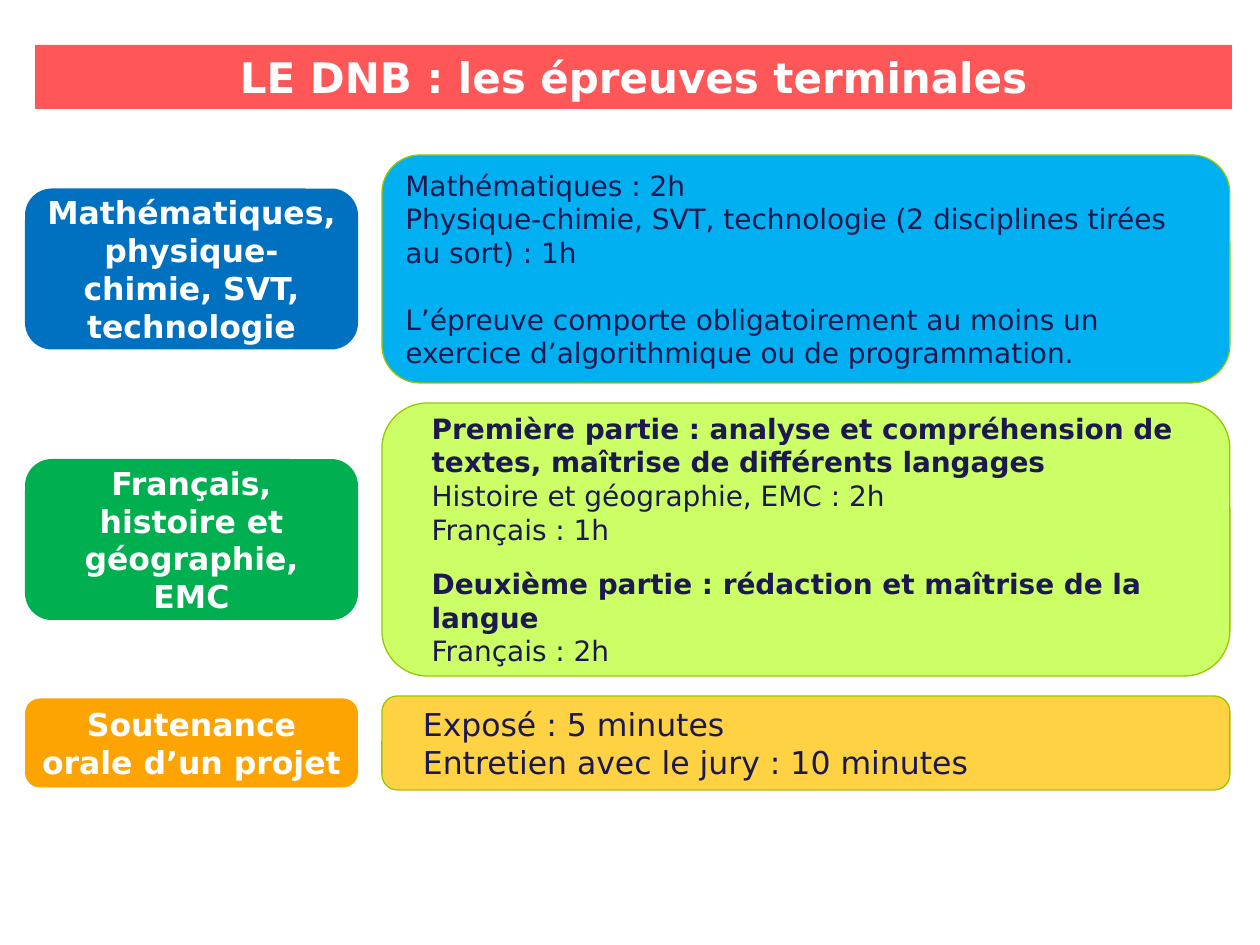
import pptx
import pptx.util
import pptx.dml.color
import pptx.enum.shapes
import pptx.enum.text

RGBColor = pptx.dml.color.RGBColor
SHAPE = pptx.enum.shapes.MSO_SHAPE
ALIGN = pptx.enum.text.PP_ALIGN
ANCHOR = pptx.enum.text.MSO_ANCHOR

WHITE = RGBColor(0xFF, 0xFF, 0xFF)
NAVY = RGBColor(0x1C, 0x18, 0x50)
CORAL = RGBColor(0xFF, 0x57, 0x57)
BLUE = RGBColor(0x00, 0x70, 0xC0)
SKY = RGBColor(0x00, 0xB0, 0xF0)
GREEN = RGBColor(0x00, 0xB0, 0x50)
LIME = RGBColor(0xCC, 0xFF, 0x66)
ORANGE = RGBColor(0xFD, 0xA4, 0x03)
YELLOW = RGBColor(0xFF, 0xD2, 0x43)
OUTLINE = RGBColor(0x96, 0xC8, 0x00)

FONT = "DejaVu Sans"
SCALE = 914400 // 126
TITLE = "LE DNB : les épreuves terminales"

# Each detail line: text, bold, space before in points
ROWS = [
    {
        "label": "Mathématiques, physique-chimie, SVT, technologie",
        "label_fill": BLUE, "label_height": 161,
        "fill": SKY, "height": 228, "size": 16, "indent": 0,
        "lines": [
            ("Mathématiques : 2h", False, 0),
            ("Physique-chimie, SVT, technologie (2 disciplines tirées au sort) : 1h", False, 0),
            ("L’épreuve comporte obligatoirement au moins un exercice "
             "d’algorithmique ou de programmation.", False, 19),
        ],
    },
    {
        "label": "Français, histoire et géographie, EMC",
        "label_fill": GREEN, "label_height": 161,
        "fill": LIME, "height": 273, "size": 16, "indent": 24,
        "lines": [
            ("Première partie : analyse et compréhension de textes, "
             "maîtrise de différents langages", True, 0),
            ("Histoire et géographie, EMC : 2h", False, 0),
            ("Français : 1h", False, 0),
            ("Deuxième partie : rédaction et maîtrise de la langue", True, 12),
            ("Français : 2h", False, 0),
        ],
    },
    {
        "label": "Soutenance orale d’un projet",
        "label_fill": ORANGE, "label_height": 89,
        "fill": YELLOW, "height": 94, "size": 18, "indent": 24,
        "lines": [
            ("Exposé : 5 minutes", False, 0),
            ("Entretien avec le jury : 10 minutes", False, 0),
        ],
    },
]

LABEL_LEFT, LABEL_WIDTH = 25, 333
DETAIL_LEFT, DETAIL_WIDTH = 382, 848
FIRST_TOP, ROW_GAP = 155, 20


def px(value):
    return pptx.util.Emu(round(value * SCALE))


def write(box, lines, size, color, align=ALIGN.LEFT, indent=0):
    frame = box.text_frame
    frame.word_wrap = True
    frame.auto_size = pptx.enum.text.MSO_AUTO_SIZE.NONE
    frame.vertical_anchor = ANCHOR.MIDDLE
    for index, (text, bold, before) in enumerate(lines):
        para = frame.add_paragraph() if index else frame.paragraphs[0]
        para.alignment = align
        para.space_before = pptx.util.Pt(before)
        if indent:
            properties = para._p.get_or_add_pPr()
            properties.set("marL", str(px(indent)))
            properties.set("indent", "0")
        span = para.add_run()
        span.text = text
        span.font.name = FONT
        span.font.size = pptx.util.Pt(size)
        span.font.bold = bold
        span.font.color.rgb = color


def add_card(page, left, top, width, height, fill, outline=None):
    box = page.shapes.add_shape(
        SHAPE.ROUNDED_RECTANGLE, px(left), px(top), px(width), px(height))
    box.shadow.inherit = False
    box.fill.solid()
    box.fill.fore_color.rgb = fill
    if outline is None:
        box.line.fill.background()
    else:
        box.line.color.rgb = outline
        box.line.width = pptx.util.Pt(0.75)
    return box


def main():
    deck = pptx.Presentation()
    deck.slide_width, deck.slide_height = px(1260), px(945)
    page = deck.slides.add_slide(deck.slide_layouts.get_by_name("Title Only"))

    title = page.shapes.title
    title.left, title.top, title.width, title.height = map(px, (35, 45, 1197, 64))
    title.fill.solid()
    title.fill.fore_color.rgb = CORAL
    write(title, [(TITLE, True, 0)], 24, WHITE, align=ALIGN.CENTER)

    top = FIRST_TOP
    for row in ROWS:
        label_top = top + (row["height"] - row["label_height"]) / 2
        label = add_card(page, LABEL_LEFT, label_top, LABEL_WIDTH,
                         row["label_height"], row["label_fill"])
        write(label, [(row["label"], True, 0)], 18, WHITE, align=ALIGN.CENTER)
        detail = add_card(page, DETAIL_LEFT, top, DETAIL_WIDTH,
                          row["height"], row["fill"], outline=OUTLINE)
        write(detail, row["lines"], row["size"], NAVY, indent=row["indent"])
        top += row["height"] + ROW_GAP

    deck.save("out.pptx")


if __name__ == "__main__":
    main()
